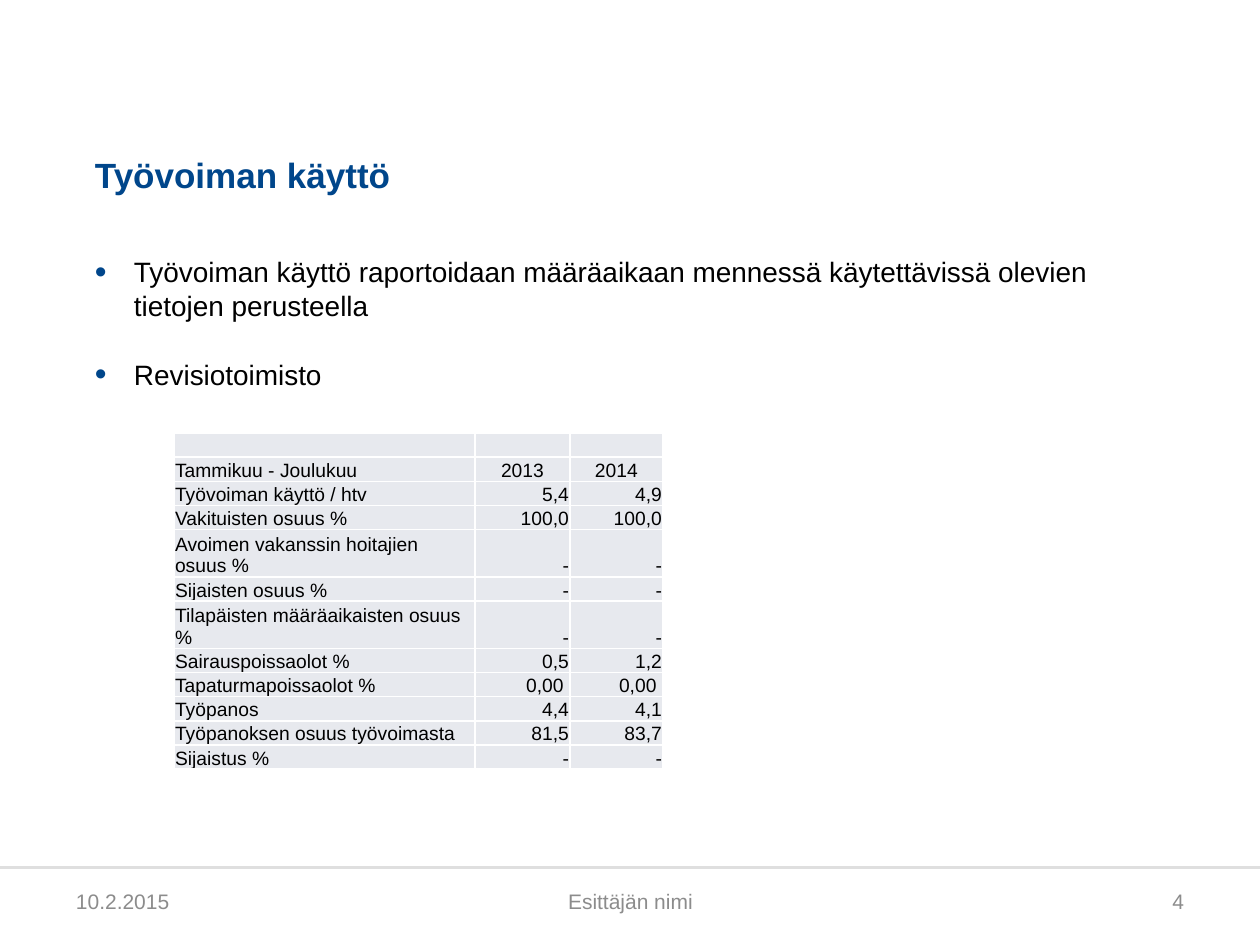
"""Build the workforce usage slide with its bullets, table and footer."""
from dataclasses import dataclass

from lxml import etree
from pptx import Presentation
from pptx import util as u
from pptx.dml.color import RGBColor
from pptx.enum import shapes, text
from pptx.oxml.ns import qn

SCALE = 914400 / 126
LEFT, CENTER, RIGHT = text.PP_ALIGN.LEFT, text.PP_ALIGN.CENTER, text.PP_ALIGN.RIGHT
TOP, MIDDLE, BOTTOM = text.MSO_ANCHOR.TOP, text.MSO_ANCHOR.MIDDLE, text.MSO_ANCHOR.BOTTOM


@dataclass(frozen=True)
class Theme:
    font: str = "Arial"
    blue: str = "00468B"
    black: str = "000000"
    white: str = "FFFFFF"
    grey: str = "8C8C8C"
    rule: str = "DFDFDF"
    cell: str = "E7E9EE"
    title_size: int = 20
    body_size: int = 16
    footer_size: int = 12
    table_size: int = 11


THEME = Theme()
BULLETS = [
    "Työvoiman käyttö raportoidaan määräaikaan mennessä käytettävissä olevien tietojen perusteella",
    "Revisiotoimisto",
]
FOOTERS = [
    ("10.2.2015", 63, 294, LEFT),
    ("Esittäjän nimi", 431, 399, CENTER),
    ("4", 903, 294, RIGHT),
]
COLUMN_WIDTHS = [301, 95, 93]
ROWS = [
    ("", "", ""),
    ("Tammikuu - Joulukuu", "2013", "2014"),
    ("Työvoiman käyttö / htv", "5,4", "4,9"),
    ("Vakituisten osuus %", "100,0", "100,0"),
    ("Avoimen vakanssin hoitajien osuus %", "-", "-"),
    ("Sijaisten osuus %", "-", "-"),
    ("Tilapäisten määräaikaisten osuus %", "-", "-"),
    ("Sairauspoissaolot %", "0,5", "1,2"),
    ("Tapaturmapoissaolot %", "0,00 ", "0,00 "),
    ("Työpanos", "4,4", "4,1"),
    ("Työpanoksen osuus työvoimasta", "81,5", "83,7"),
    ("Sijaistus %", "-", "-"),
]
HEADER_ROW = 1
TWO_LINE_ROWS = (4, 6)


def px(length):
    """Turn pixels into EMU."""
    return u.Emu(round(length * SCALE))


def style_font(paragraph, size, color, bold=False):
    """Set the theme font, size and colour on a paragraph."""
    font = paragraph.font
    font.name, font.size, font.bold = THEME.font, u.Pt(size), bold
    font.color.rgb = RGBColor.from_string(color)


def add_text_frame(slide, box, anchor, margins=(0, 0)):
    """Add a wrapping text box and return its text frame."""
    frame = slide.shapes.add_textbox(*map(px, box)).text_frame
    frame.word_wrap = True
    frame.vertical_anchor = anchor
    frame.margin_left = frame.margin_right = px(margins[0])
    frame.margin_top = frame.margin_bottom = px(margins[1])
    return frame


def add_title(slide):
    """Add the slide title."""
    frame = add_text_frame(slide, (95, 86, 1071, 109), BOTTOM)
    paragraph = frame.paragraphs[0]
    paragraph.text = "Työvoiman käyttö"
    style_font(paragraph, THEME.title_size, THEME.blue, bold=True)


def add_bullet(paragraph):
    """Give a paragraph a hanging blue bullet."""
    properties = paragraph._p.get_or_add_pPr()
    properties.set("marL", str(px(39)))
    properties.set("indent", str(px(-39)))
    color = etree.SubElement(properties, qn("a:buClr"))
    etree.SubElement(color, qn("a:srgbClr"), val=THEME.blue)
    etree.SubElement(properties, qn("a:buSzPct"), val="120000")
    etree.SubElement(properties, qn("a:buFont"), typeface=THEME.font)
    etree.SubElement(properties, qn("a:buChar"), char="•")


def add_body(slide):
    """Add the bulleted body text."""
    frame = add_text_frame(slide, (95, 255, 1071, 614), TOP)
    for index, line in enumerate(BULLETS):
        paragraph = frame.add_paragraph() if index else frame.paragraphs[0]
        paragraph.text = line
        add_bullet(paragraph)
        if index:
            paragraph.space_before = u.Pt(20)
        style_font(paragraph, THEME.body_size, THEME.black)


def set_borders(cell):
    """Draw thin white borders around a table cell."""
    properties = cell._tc.get_or_add_tcPr()
    for side in ("lnL", "lnR", "lnT", "lnB"):
        line = etree.SubElement(properties, qn(f"a:{side}"), w=str(u.Pt(1)))
        fill = etree.SubElement(line, qn("a:solidFill"))
        etree.SubElement(fill, qn("a:srgbClr"), val=THEME.white)


def fill_cell(cell, value, alignment):
    """Write and style one table cell."""
    set_borders(cell)
    cell.fill.solid()
    cell.fill.fore_color.rgb = RGBColor.from_string(THEME.cell)
    cell.vertical_anchor = BOTTOM
    cell.margin_left = cell.margin_right = cell.margin_top = px(1)
    cell.margin_bottom = 0
    paragraph = cell.text_frame.paragraphs[0]
    paragraph.text = value
    paragraph.alignment = alignment
    style_font(paragraph, THEME.table_size, THEME.black)


def add_workforce_table(slide):
    """Add the table of workforce figures."""
    heights = [44 if row in TWO_LINE_ROWS else 23 for row in range(len(ROWS))]
    box = (174, 433, sum(COLUMN_WIDTHS), sum(heights))
    table = slide.shapes.add_table(len(ROWS), len(COLUMN_WIDTHS), *map(px, box)).table
    table.first_row = table.horz_banding = False
    for column, width in zip(table.columns, COLUMN_WIDTHS):
        column.width = px(width)
    for row, (values, height) in enumerate(zip(ROWS, heights)):
        table.rows[row].height = px(height)
        for column, value in enumerate(values):
            value_alignment = CENTER if row == HEADER_ROW else RIGHT
            fill_cell(table.cell(row, column), value, value_alignment if column else LEFT)


def add_footer(slide):
    """Add the footer band, its rule and its three texts."""
    band = slide.shapes.add_shape(shapes.MSO_SHAPE.RECTANGLE, *map(px, (0, 869, 1260, 76)))
    band.shadow.inherit = False
    band.fill.solid()
    band.fill.fore_color.rgb = RGBColor.from_string(THEME.white)
    band.line.fill.background()
    rule = slide.shapes.add_connector(
        shapes.MSO_CONNECTOR.STRAIGHT, *map(px, (0, 868, 1260, 868)))
    rule.line.color.rgb = RGBColor.from_string(THEME.rule)
    rule.line.width = u.Pt(1.75)
    etree.SubElement(rule._element.spPr, qn("a:effectLst"))
    for label, left, width, alignment in FOOTERS:
        frame = add_text_frame(slide, (left, 876, width, 50), MIDDLE, (13, 6))
        paragraph = frame.paragraphs[0]
        paragraph.text = label
        paragraph.alignment = alignment
        style_font(paragraph, THEME.footer_size, THEME.grey)


def main():
    """Build and save the slide."""
    presentation = Presentation()
    presentation.slide_width, presentation.slide_height = px(1260), px(945)
    slide = presentation.slides.add_slide(presentation.slide_layouts[6])
    add_footer(slide)
    add_title(slide)
    add_body(slide)
    add_workforce_table(slide)
    presentation.save("out.pptx")


if __name__ == "__main__":
    main()
